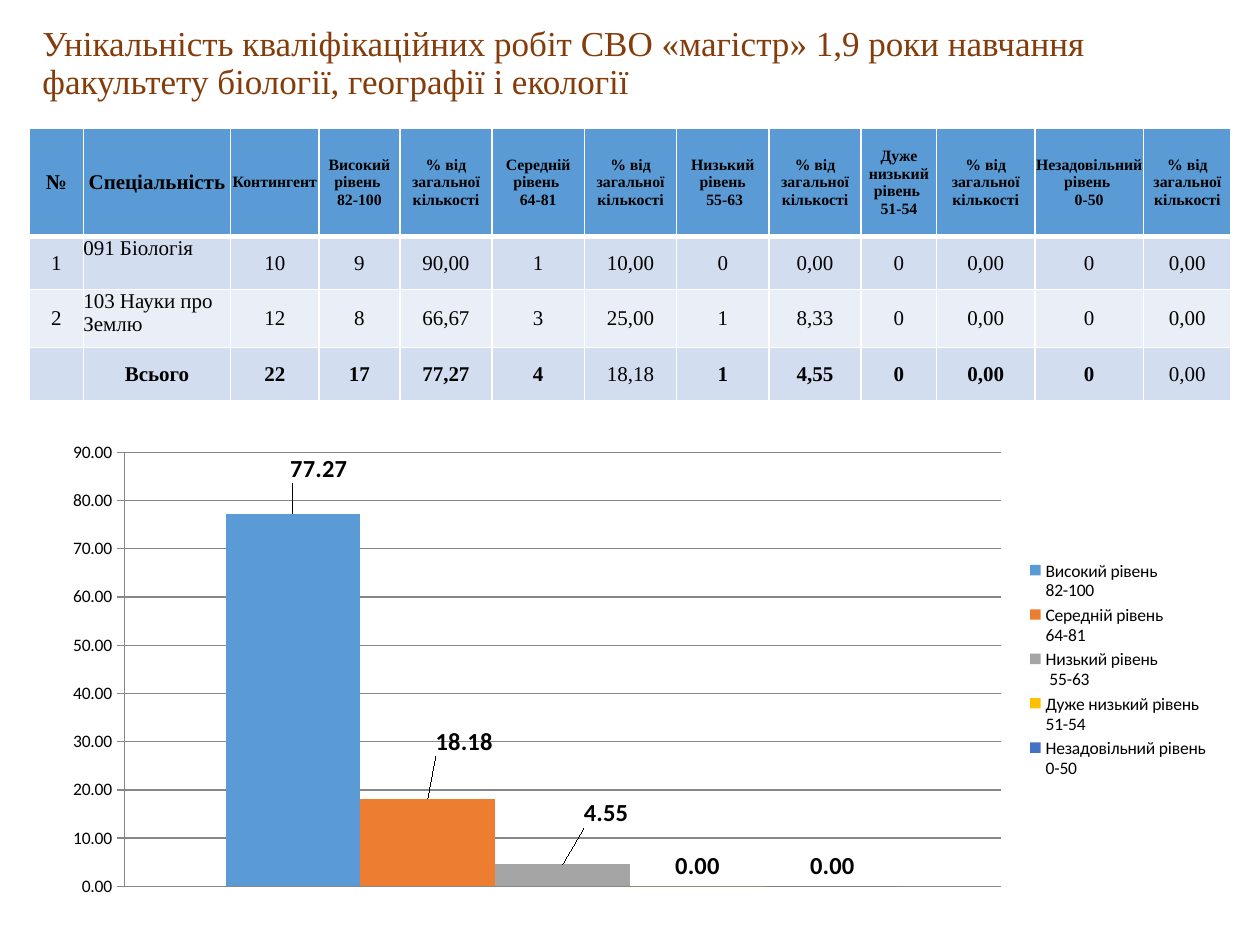
import dataclasses

import lxml.etree
import pptx
import pptx.chart.data
import pptx.dml.color
import pptx.enum.chart
import pptx.enum.text
import pptx.oxml
import pptx.oxml.ns
import pptx.util

Cm, Pt = pptx.util.Cm, pptx.util.Pt
RGB = pptx.dml.color.RGBColor.from_string
ALIGN = pptx.enum.text.PP_ALIGN
ANCHOR = pptx.enum.text.MSO_ANCHOR
qn = pptx.oxml.ns.qn


@dataclasses.dataclass(frozen=True)
class Theme:
    serif: str = "Times New Roman"
    sans: str = "Calibri"
    title: str = "843C0B"
    ink: str = "000000"
    rule: str = "FFFFFF"
    grid: str = "868686"
    head: str = "5B9BD5"
    bands: tuple = ("D2DEEF", "EAEFF7")
    bars: tuple = ("5B9BD5", "ED7D31", "A5A5A5", "FFC000", "4472C4")
    title_size: int = 20
    body_size: int = 12
    small_size: int = 9
    chart_size: int = 10
    label_size: int = 14


theme = Theme()


def write(frame, text, size=theme.body_size, color=theme.ink, bold=False,
          align=ALIGN.CENTER, spacing=None):
    line = frame.paragraphs[0]
    line.text = text
    line.alignment = align
    line.line_spacing = spacing
    font = line.font
    font.name, font.size, font.bold = theme.serif, Pt(size), bold
    font.color.rgb = RGB(color)


def edge(cell, side, width):
    """Draw a solid rule on one side (L, R, T or B) of a table cell."""
    line = lxml.etree.SubElement(cell._tc.get_or_add_tcPr(), qn(f"a:ln{side}"),
                                 w=str(Pt(width)))
    fill = lxml.etree.SubElement(line, qn("a:solidFill"))
    lxml.etree.SubElement(fill, qn("a:srgbClr"), val=theme.rule)


deck = pptx.Presentation()
deck.slide_width, deck.slide_height = Cm(25.4), Cm(19.05)
slide = deck.slides.add_slide(deck.slide_layouts[5])

# Title
title = slide.shapes.title
title.left, title.top, title.width, title.height = Cm(0.6), Cm(0.4), Cm(24.8), Cm(1.8)
frame = title.text_frame
frame.word_wrap = True
frame.auto_size = pptx.enum.text.MSO_AUTO_SIZE.NONE
frame.vertical_anchor = ANCHOR.MIDDLE
write(frame, "Унікальність кваліфікаційних робіт СВО «магістр» 1,9 роки навчання "
      "факультету біології, географії і екології",
      size=theme.title_size, color=theme.title, align=ALIGN.LEFT, spacing=0.9)

# Table
levels = ["Високий рівень \n82-100", "Середній рівень \n64-81", "Низький рівень\n 55-63",
          "Дуже низький рівень \n51-54", "Незадовільний рівень \n0-50"]
head = ["№", "Спеціальність", "Контингент"]
for level in levels:
    head += [level, "% від загальної кількості"]
rows = [
    head,
    ["1", "091 Біологія", "10", "9", "90,00", "1", "10,00", "0", "0,00", "0", "0,00", "0", "0,00"],
    ["2", "103 Науки про Землю", "12", "8", "66,67", "3", "25,00", "1", "8,33", "0", "0,00", "0", "0,00"],
    ["", "Всього", "22", "17", "77,27", "4", "18,18", "1", "4,55", "0", "0,00", "0", "0,00"],
]
widths = [1.09, 2.97, 1.78, 1.63] + [1.86] * 5 + [1.52, 1.98, 2.19, 1.77]
heights = [2.18, 1.07, 1.17, 1.07]
total = len(rows) - 1
plain = (6, 12)  # columns left unbold in the total row

table = slide.shapes.add_table(len(rows), len(head), Cm(0.59), Cm(2.59),
                               Cm(sum(widths)), Cm(sum(heights))).table
for column, width in zip(table.columns, widths):
    column.width = Cm(width)
for r, (row, height) in enumerate(zip(rows, heights)):
    table.rows[r].height = Cm(height)
    for c, text in enumerate(row):
        cell = table.cell(r, c)
        cell.margin_left = cell.margin_right = cell.margin_top = cell.margin_bottom = 0
        name = c == 1 and 0 < r < total
        cell.vertical_anchor = ANCHOR.TOP if name else ANCHOR.MIDDLE
        for side in "LRTB":
            thick = (r, side) in ((0, "B"), (1, "T"))
            edge(cell, side, 3 if thick else 1)
        cell.fill.solid()
        cell.fill.fore_color.rgb = RGB(theme.bands[(r - 1) % 2] if r else theme.head)
        write(cell.text_frame, text,
              size=theme.small_size if r == 0 and c > 1 else theme.body_size,
              bold=r == 0 or (r == total and c not in plain),
              align=ALIGN.LEFT if name else ALIGN.CENTER)

# Chart
data = pptx.chart.data.CategoryChartData(number_format="0.00")
data.categories = ["1"]
for level, value in zip(levels, [77.27, 18.18, 4.55, 0, 0]):
    data.add_series(level, [value])
chart = slide.shapes.add_chart(pptx.enum.chart.XL_CHART_TYPE.COLUMN_CLUSTERED,
                               Cm(0.99), Cm(8.74), Cm(23.72), Cm(9.53), data).chart
chart.has_title = False
chart.font.name, chart.font.size = theme.sans, Pt(theme.chart_size)
chart.font.color.rgb = RGB(theme.ink)
chart.has_legend = True
chart.legend.position = pptx.enum.chart.XL_LEGEND_POSITION.RIGHT
chart.legend.include_in_layout = False
chart.category_axis.visible = False

axis = chart.value_axis
axis.minimum_scale, axis.maximum_scale, axis.major_unit = 0, 90, 10
axis.major_tick_mark = pptx.enum.chart.XL_TICK_MARK.CROSS
axis.tick_labels.number_format = "0.00"
axis.tick_labels.number_format_is_linked = False
for line in (axis.format.line, axis.major_gridlines.format.line):
    line.color.rgb = RGB(theme.grid)
    line.width = Pt(0.75)

layout = ('<c:layout xmlns:c="http://schemas.openxmlformats.org/drawingml/2006/chart">'
          '<c:manualLayout>{}</c:manualLayout></c:layout>')
area = chart._chartSpace.chart.plotArea
for old in area.findall(qn("c:layout")):
    area.remove(old)
parts = ('<c:layoutTarget val="inner"/><c:xMode val="edge"/><c:yMode val="edge"/>'
         '<c:x val="0.064"/><c:y val="0.04"/><c:w val="0.745"/><c:h val="0.918"/>')
area.insert(0, pptx.oxml.parse_xml(layout.format(parts)))

plot = chart.plots[0]
plot.gap_width, plot.overlap, plot.vary_by_categories = 150, 0, False
shifts = [(0.022, -0.053), (0.031, -0.078), (0.037, -0.066), None, None]
outer = pptx.enum.chart.XL_LABEL_POSITION.OUTSIDE_END
for series, color, shift in zip(plot.series, theme.bars, shifts):
    series.format.fill.solid()
    series.format.fill.fore_color.rgb = RGB(color)
    labels = series.data_labels
    labels.show_value = True
    labels.number_format, labels.number_format_is_linked = "0.00", False
    marks = [labels]
    if shift:
        marks.append(series.points[0].data_label)
    for mark in marks:
        mark.position = outer
        mark.font.size, mark.font.bold = Pt(theme.label_size), True
        mark.font.name = theme.sans
        mark.font.color.rgb = RGB(theme.ink)
    if shift:
        spot = labels._element.find(qn("c:dLbl"))
        parts = '<c:x val="{}"/><c:y val="{}"/>'.format(*shift)
        spot.insert(1, pptx.oxml.parse_xml(layout.format(parts)))

deck.save("out.pptx")
